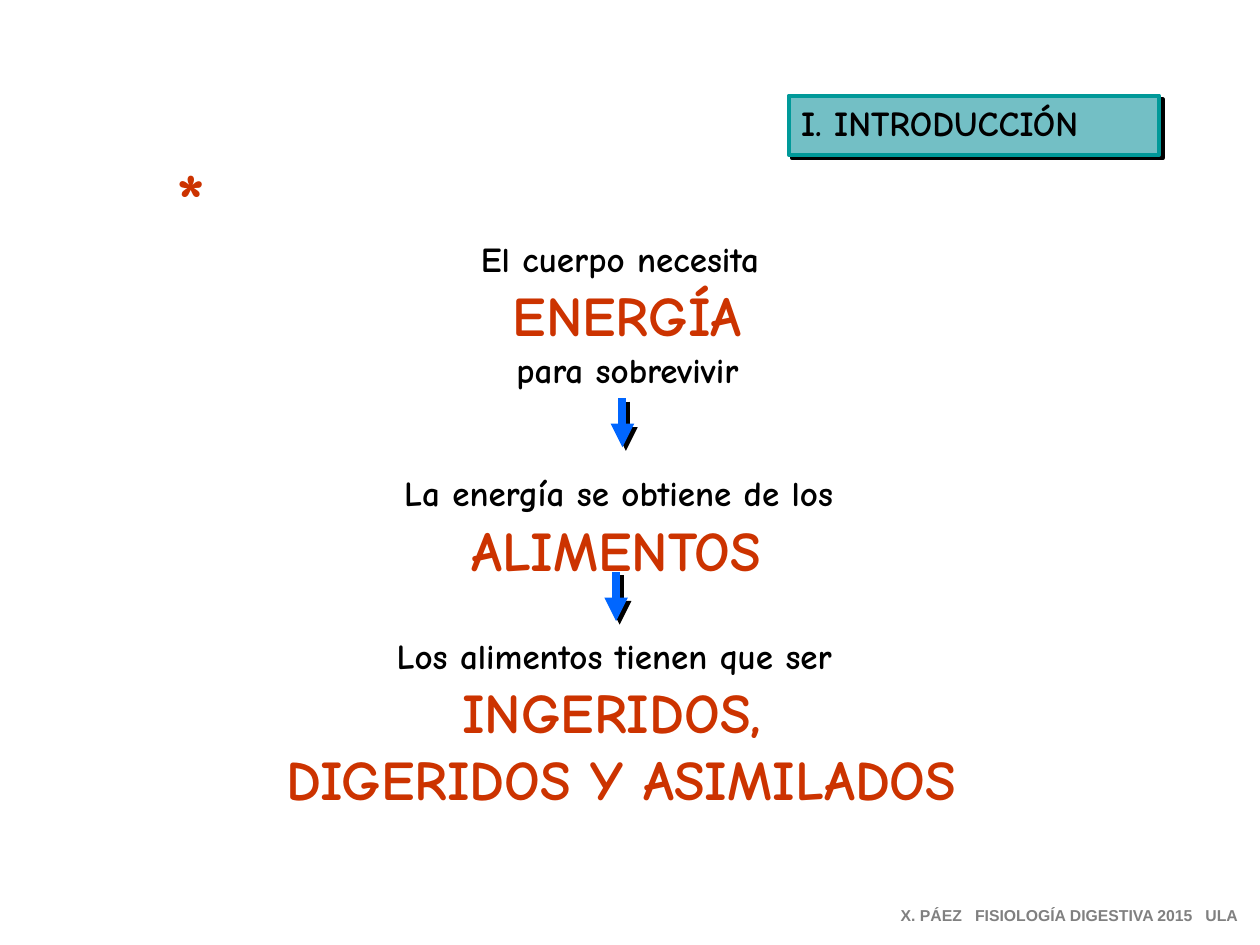
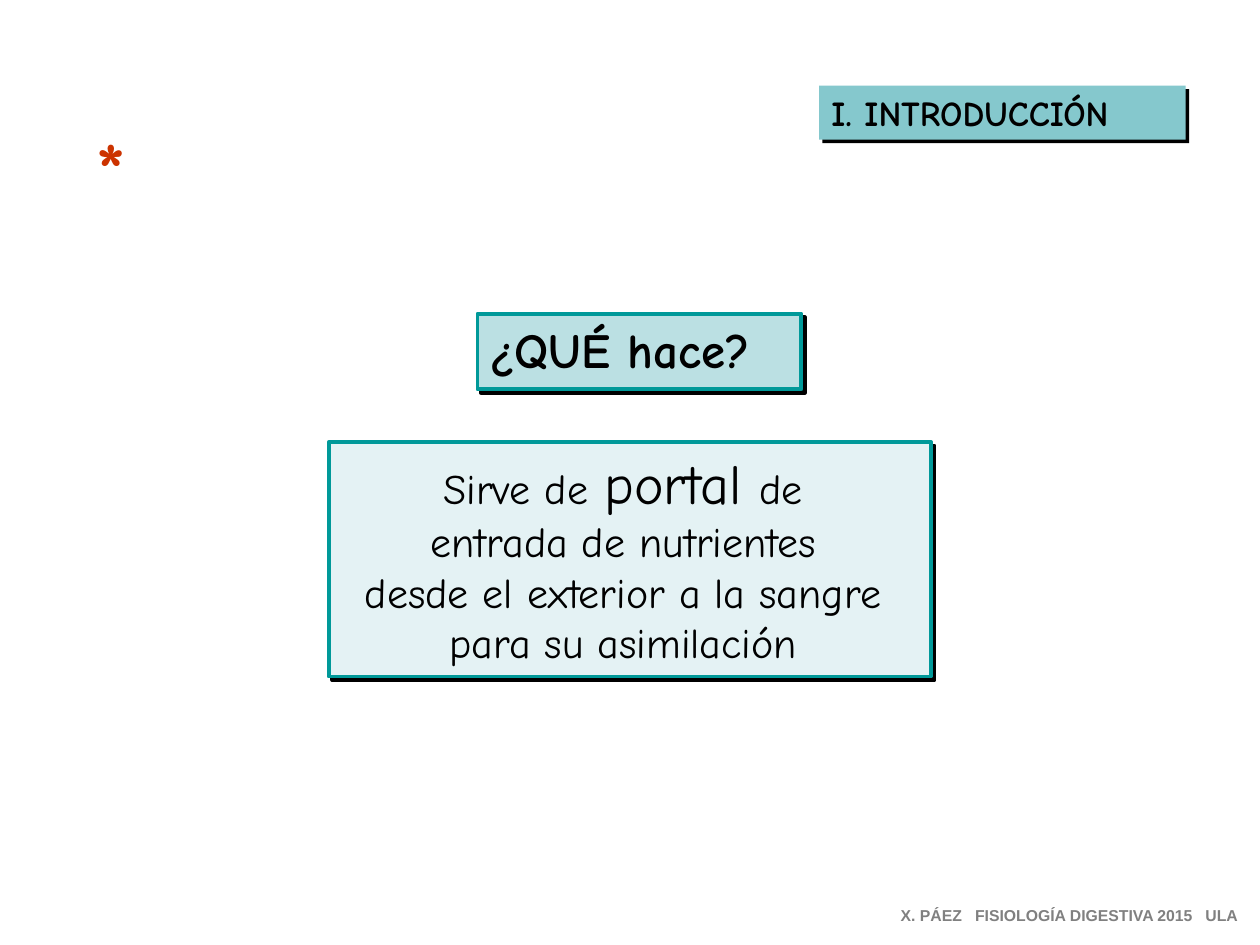
from lxml import etree
from pptx import Presentation
from pptx.dml.color import RGBColor
from pptx.enum.shapes import MSO_CONNECTOR, MSO_SHAPE
from pptx.enum.text import MSO_ANCHOR, MSO_AUTO_SIZE, PP_ALIGN
from pptx.oxml.ns import qn
from pptx.util import Inches, Pt

LEFT, CENTER = PP_ALIGN.LEFT, PP_ALIGN.CENTER
TOP = MSO_ANCHOR.TOP
FIT = MSO_AUTO_SIZE.SHAPE_TO_FIT_TEXT
STRAIGHT, RECTANGLE = MSO_CONNECTOR.STRAIGHT, MSO_SHAPE.RECTANGLE

SLIDE_WIDTH, SLIDE_HEIGHT = Inches(10), Inches(7.5)
COLUMN, ROW = SLIDE_WIDTH / 100, SLIDE_HEIGHT / 75
BLANK_LAYOUT = 6

BODY_FONT, FOOTER_FONT = "Comic Neue", "Arial"
BLACK, RED, BLUE, GRAY, TEAL = "000000", "CC3300", "0066FF", "808080", "009999"
SECTION = "I. INTRODUCCIÓN"
FOOTER = ("X. PÁEZ", "FISIOLOGÍA DIGESTIVA 2015", "ULA")
FOOTER_BOX = (70.5, 71.4, 29.2, 2.5)


def color(code):
    """Turn a hex string into a colour."""
    return RGBColor.from_string(code)


def place(box):
    """Turn grid columns and rows into slide lengths."""
    left, top, width, height = box
    return (round(left * COLUMN), round(top * ROW),
            round(width * COLUMN), round(height * ROW))


def within(outer, part):
    """Move a part's box from its region to the slide."""
    return (outer[0] + part[0], outer[1] + part[1], part[2], part[3])


def hard_shadow():
    """Make the solid black shadow, down and to the right."""
    effects = etree.Element(qn("a:effectLst"))
    outer = etree.SubElement(effects, qn("a:outerShdw"), dist="35921",
                             dir="2700000", algn="ctr", rotWithShape="0")
    etree.SubElement(outer, qn("a:srgbClr"), val=BLACK)
    return effects


def add_span(para, text, size, ink=BLACK, bold=True, font=BODY_FONT):
    """Add one run of styled text."""
    span = para.add_run()
    span.text = text
    span.font.size = Pt(size)
    span.font.bold = bold
    span.font.color.rgb = color(ink)
    span.font.name = font
    return span


def write(shape, lines, align=LEFT, wrap=False):
    """Write lines, each a list of spans, into a shape."""
    frame = shape.text_frame
    frame.word_wrap = wrap
    frame.auto_size = FIT
    frame.vertical_anchor = TOP
    for number, spans in enumerate(lines):
        para = frame.add_paragraph() if number else frame.paragraphs[0]
        para.alignment = align
        for span in spans:
            add_span(para, *span)


def add_text(page, box, lines, align=LEFT, wrap=False):
    """Add a text box."""
    label = page.shapes.add_textbox(*place(box))
    write(label, lines, align, wrap)
    return label


def add_panel(page, box, fill, lines, border=None, align=LEFT):
    """Add a filled rectangle with a hard shadow and text."""
    panel = page.shapes.add_shape(RECTANGLE, *place(box))
    panel.shadow.inherit = False
    panel.fill.solid()
    panel.fill.fore_color.rgb = color(fill)
    if border:
        panel.line.color.rgb = color(border)
        panel.line.width = Pt(2.25)
    else:
        panel.line.fill.background()
    properties = panel._element.spPr
    properties.remove(properties.find(qn("a:effectLst")))
    properties.append(hard_shadow())
    write(panel, lines, align)


def add_down_arrow(page, box):
    """Add a blue arrow down the left side of its box."""
    left, top, _, height = place(box)
    arrow = page.shapes.add_connector(STRAIGHT, left, top, left, top + height)
    arrow.line.color.rgb = color(BLUE)
    arrow.line.width = Pt(4.5)
    etree.SubElement(arrow.line._get_or_add_ln(), qn("a:tailEnd"), type="triangle")
    arrow._element.spPr.append(hard_shadow())


def add_asterisk(page, box, wrap):
    """Add the red asterisk with its text shadow."""
    label = add_text(page, box, [[("*", 44, RED)]], wrap=wrap)
    style = label.text_frame.paragraphs[0].runs[0].font._element
    style.find(qn("a:solidFill")).addnext(hard_shadow())


def add_footer(page, box):
    """Add the credit line with widened gaps between its parts."""
    label = add_text(page, box, [[]])
    para = label.text_frame.paragraphs[0]
    for number, part in enumerate(FOOTER):
        if number:
            gap = add_span(para, " ", 9, GRAY, True, FOOTER_FONT)
            gap.font._element.set("spc", "500")
        add_span(para, part, 9, GRAY, True, FOOTER_FONT)


def add_step(page, box, lead, keywords, closing=None):
    """Add a lead phrase, its red keywords and a closing phrase."""
    lines = [[(lead, 20), (" ", 24)]]
    lines += [[(word, 32, RED)] for word in keywords]
    if closing:
        lines.append([(closing, 20)])
    add_text(page, box, lines, CENTER)


def add_energy_flow(page, box):
    """Place the three steps and the arrows between them."""
    add_step(page, within(box, (19.4, 0, 28, 13.7)),
             "El cuerpo necesita", ["ENERGÍA"], "para sobrevivir")
    add_step(page, within(box, (12.5, 18.6, 41.6, 10.3)),
             "La energía se obtiene de los", ["ALIMENTOS "])
    add_step(page, within(box, (0, 31.5, 65.9, 15.7)),
             "Los alimentos tienen que ser",
             ["INGERIDOS, ", "DIGERIDOS Y ASIMILADOS"])
    for left, top in ((33, 13.8), (32.5, 27.6)):
        add_down_arrow(page, within(box, (left, top, 0, 3.9)))


def add_purpose(page, box):
    """Place the question above its answer."""
    add_panel(page, within(box, (11.8, 0, 25.7, 6)), "BBE0E3",
              [[("¿QUÉ hace?", 28)]], TEAL)
    opening = [("Sirve de", 24, BLACK, False), (" ", 28, BLACK, False),
               ("portal", 32, BLACK, False), (" ", 28),
               ("de ", 24, BLACK, False)]
    rest = ("entrada de nutrientes ", "desde el exterior a la sangre ",
            "para su asimilación ")
    lines = [opening] + [[(text, 24, BLACK, False)] for text in rest]
    add_panel(page, within(box, (0, 10.2, 47.8, 18.6)), "E4F2F4",
              lines, TEAL, CENTER)


def add_page(deck, tab_box, tab_fill, tab_border, asterisk_box, wrap):
    """Add a slide with the section tab, asterisk and footer."""
    page = deck.slides.add_slide(deck.slide_layouts[BLANK_LAYOUT])
    add_panel(page, tab_box, tab_fill, [[(SECTION, 20)]], tab_border)
    add_asterisk(page, asterisk_box, wrap)
    add_footer(page, FOOTER_BOX)
    return page


def main():
    """Build and save the deck."""
    deck = Presentation()
    deck.slide_width, deck.slide_height = SLIDE_WIDTH, SLIDE_HEIGHT
    energy = add_page(deck, (62.6, 7.6, 29.4, 4.7), "73BFC5", TEAL,
                      (13, 11.5, 5.2, 8.3), False)
    add_energy_flow(energy, (16.4, 17.8, 65.9, 47.2))
    purpose = add_page(deck, (65, 6.8, 29.1, 4.3), "85C8CD", None,
                       (6.7, 9.1, 5.2, 8.3), True)
    add_purpose(purpose, (26.1, 24.9, 47.8, 28.8))
    deck.save("out.pptx")


if __name__ == "__main__":
    main()
